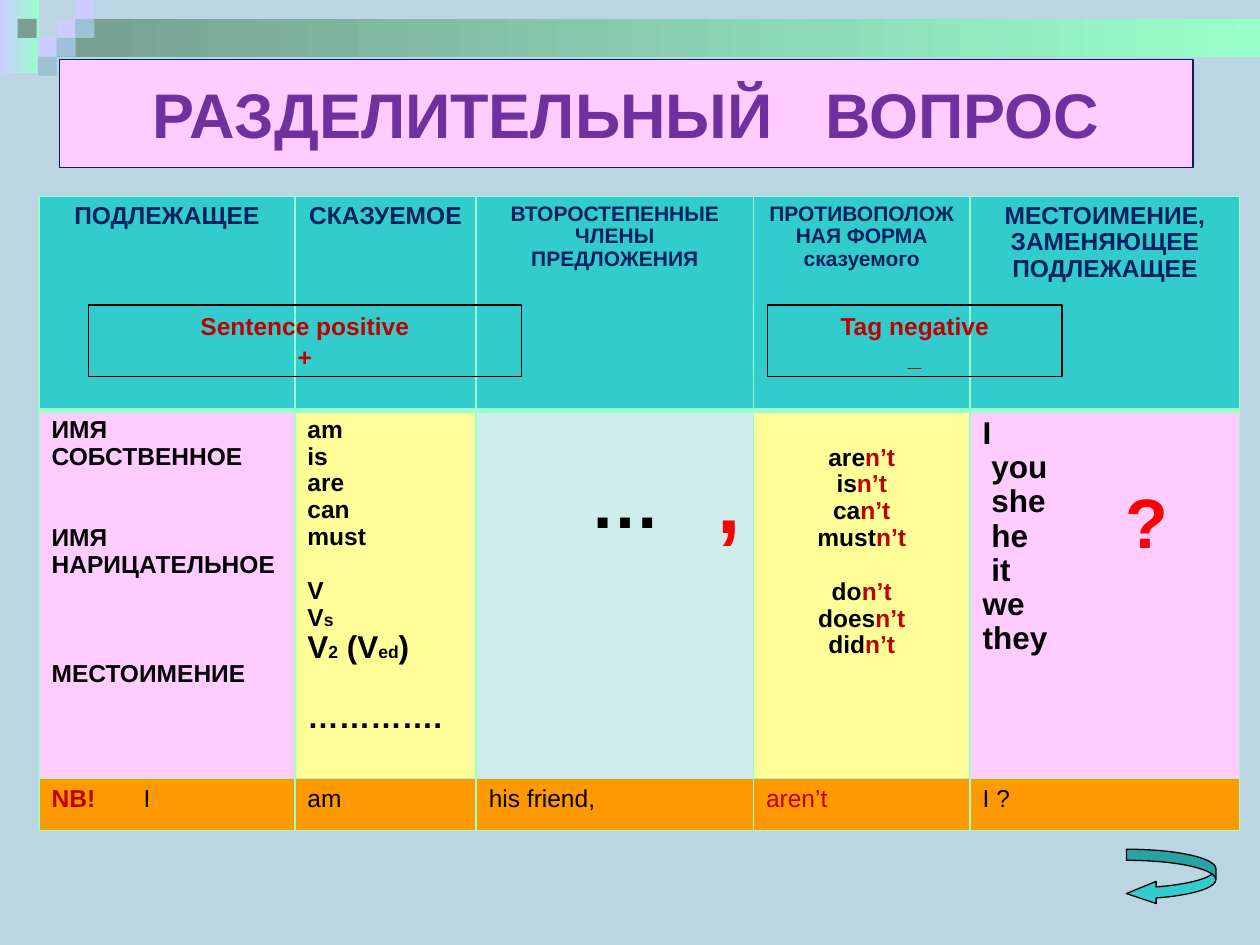
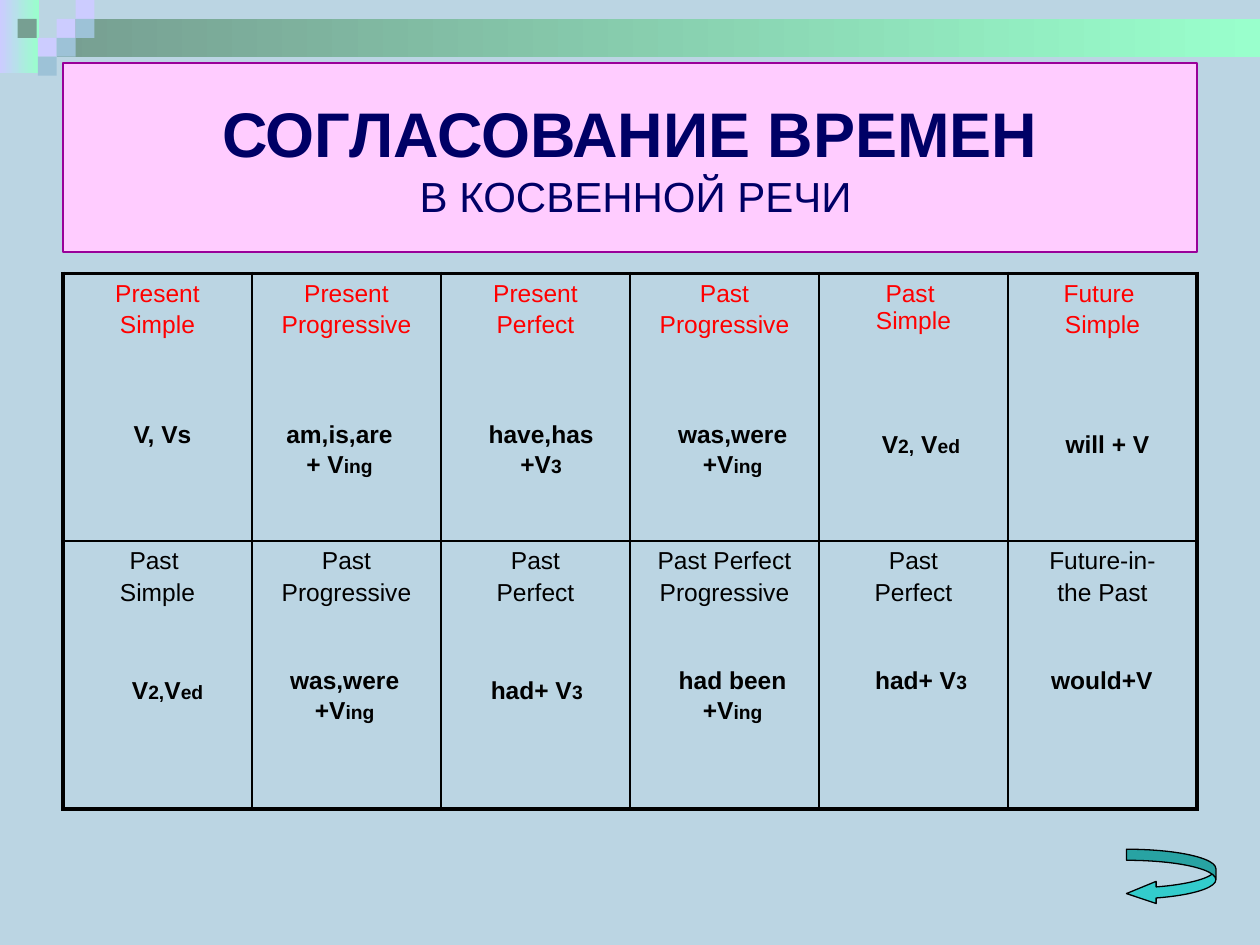
from dataclasses import dataclass
from pptx import Presentation
from pptx.dml.color import RGBColor
from pptx.enum.shapes import MSO_SHAPE as Shape
from pptx.enum.text import MSO_ANCHOR as Anchor, PP_ALIGN as Align
from pptx.oxml import parse_xml
from pptx.oxml.ns import nsdecls
from pptx.util import Inches, Pt


@dataclass(frozen=True)
class Theme:
    font: str = "Arial"
    page: str = "BBD5E3"
    lilac: str = "CCCCFF"
    mint: str = "99FFCC"
    sage: str = "779F92"
    steel: str = "9DC2D7"
    pink: str = "FFCCFF"
    teal: str = "33CCCC"
    pale_teal: str = "CEECEC"
    yellow: str = "FFFF99"
    orange: str = "FF9900"
    navy: str = "002060"
    ink_blue: str = "000066"
    violet: str = "7030A0"
    purple: str = "990099"
    red: str = "FF0000"
    dark_red: str = "C00000"
    black: str = "000000"
    title: float = 36
    subtitle: float = 24
    comma: float = 48
    mark: float = 40
    large: float = 18
    body: float = 14
    compact: float = 12
    suffix: float = 11
    subscript: float = 10


THEME = Theme()


@dataclass
class Span:
    text: str
    size: float = None
    color: str = None
    bold: bool = None
    spacing: float = 0


@dataclass
class Line:
    spans: list
    before: float = 0


# Shared helpers
def place(box):
    return [Inches(value) for value in box]


def rgb(color):
    return RGBColor.from_string(color)


def write(frame, lines, size=THEME.body, color=THEME.black, bold=True,
          align=Align.CENTER, before=0, line_spacing=None):
    """Lines are plain strings, lists of spans or Line objects."""
    for number, line in enumerate(lines):
        para = frame.paragraphs[0] if number == 0 else frame.add_paragraph()
        if not isinstance(line, Line):
            line = Line(line, before)
        para.alignment = align
        para.space_before = Pt(line.before if number else 0)
        para.line_spacing = line_spacing
        spans = [Span(line.spans)] if isinstance(line.spans, str) else line.spans
        for part in spans:
            for index, piece in enumerate(part.text.split("\v")):
                if index:
                    para.add_line_break()
                if not piece:
                    continue
                span = para.add_run()
                span.text = piece
                span.font.name = THEME.font
                span.font.size = Pt(part.size or size)
                span.font.bold = bold if part.bold is None else part.bold
                span.font.color.rgb = rgb(part.color or color)
                if part.spacing:
                    span.font._element.set("spc", str(int(part.spacing * 100)))


def formula(*parts, size=THEME.body, small=THEME.suffix):
    """Alternate full-size and small pieces."""
    return [Span(text, small if i % 2 else size) for i, text in enumerate(parts)]


def add_box(page, box, fill=None, line=None, kind=Shape.RECTANGLE):
    shape = page.shapes.add_shape(kind, *place(box))
    shape.shadow.inherit = False
    if fill is None:
        shape.fill.background()
    elif isinstance(fill, tuple):
        shape.fill.gradient()
        shape.fill.gradient_angle = 0
        for stop, color in zip(shape.fill.gradient_stops, fill):
            stop.color.rgb = rgb(color)
    else:
        shape.fill.solid()
        shape.fill.fore_color.rgb = rgb(fill)
    if line:
        shape.line.color.rgb = rgb(line)
        shape.line.width = Pt(0.75)
    else:
        shape.line.fill.background()
    shape.text_frame.word_wrap = True
    shape.text_frame.vertical_anchor = Anchor.MIDDLE
    return shape


def add_label(page, box, lines, **style):
    frame = page.shapes.add_textbox(*place(box)).text_frame
    frame.word_wrap = True
    write(frame, lines, **style)
    return frame


def add_grid(page, box, widths, heights):
    table = page.shapes.add_table(len(heights), len(widths), *place(box)).table
    table.first_row = table.horz_banding = False
    for column, width in zip(table.columns, widths):
        column.width = Inches(width)
    for row, height in zip(table.rows, heights):
        row.height = Inches(height)
    return table


def style_cell(cell, fill, color, left, right, top, bottom):
    if fill:
        cell.fill.solid()
        cell.fill.fore_color.rgb = rgb(fill)
    else:
        cell.fill.background()
    properties = cell._tc.get_or_add_tcPr()
    sides = zip("LRTB", (left, right, top, bottom))
    for index, (side, width) in enumerate(sides):
        properties.insert(index, parse_xml(
            f'<a:ln{side} {nsdecls("a")} w="{Pt(width)}"><a:solidFill>'
            f'<a:srgbClr val="{color}"/></a:solidFill></a:ln{side}>'))


# Page frame: background, top band, mosaic, title and return arrow
def add_page(deck):
    page = deck.slides.add_slide(deck.slide_layouts[6])
    page.background.fill.solid()
    page.background.fill.fore_color.rgb = rgb(THEME.page)
    add_box(page, (0, 0, 0.31, 0.58), (THEME.lilac, THEME.mint))
    add_box(page, (0.45, 0.15, 9.55, 0.3), (THEME.sage, THEME.mint))
    tile = 0.15
    mosaic = [(0.45, 0.15, THEME.lilac), (0.6, 0, THEME.lilac),
              (0.6, 0.15, THEME.steel), (0.3, 0.3, THEME.lilac),
              (0.14, 0.15, THEME.sage), (0.45, 0.3, THEME.steel),
              (0.3, 0.45, THEME.steel)]
    for left, top, color in mosaic:
        add_box(page, (left, top, tile, tile), color)
    return page


def add_title(page, box, spans, color, line):
    shape = add_box(page, box, THEME.pink, line)
    write(shape.text_frame, [spans], THEME.title, color)


def add_return_arrow(page, box=(8.94, 6.74, 0.71, 0.44)):
    arrow = add_box(page, box, THEME.teal, THEME.black, Shape.CURVED_LEFT_ARROW)
    for index, value in enumerate((0.2, 0.4, 0.535)):
        arrow.adjustments[index] = value


# Slide 1: tag questions
def negative(verb):
    return [Span(verb), Span("n’t", color=THEME.dark_red)]


def add_question_table(page, box):
    table = add_grid(page, box, (2.03, 1.44, 2.2, 1.72, 2.14), (1.7, 2.92, 0.41))
    spacing = 0.97
    line, large_line = 15.7, 20.1
    headers = [["ПОДЛЕЖАЩЕЕ"], ["СКАЗУЕМОЕ"],
               ["ВТОРОСТЕПЕННЫЕ ЧЛЕНЫ ПРЕДЛОЖЕНИЯ"],
               ["ПРОТИВОПОЛОЖНАЯ ФОРМА", "сказуемого"],
               ["МЕСТОИМЕНИЕ, ЗАМЕНЯЮЩЕЕ ПОДЛЕЖАЩЕЕ"]]
    bodies = [
        ["ИМЯ СОБСТВЕННОЕ", Line("ИМЯ НАРИЦАТЕЛЬНОЕ", 2 * line),
         Line("МЕСТОИМЕНИЕ", 3 * line)],
        ["am", "is", "are", "can", "must", Line("V", line),
         formula("V", "s", small=THEME.subscript),
         formula("V", "2", " (V", "ed", ")", size=THEME.large,
                 small=THEME.subscript),
         Line([Span("………….", THEME.large)], large_line)],
        [],
        [negative("are"), negative("is"), negative("ca"), negative("must"),
         Line(negative("do"), line), negative("does"), negative("did")],
        ["I", " you", " she", " he", " it", "we", "they"]]
    notes = [[Span("NB!\t", color=THEME.dark_red, bold=True), Span("I")],
             "am", "his friend,", [Span("aren’t", color=THEME.dark_red)], "I ?"]
    body_fills = (THEME.pink, THEME.yellow, THEME.pale_teal, THEME.yellow, THEME.pink)

    for column, fill in enumerate(body_fills):
        header, body, note = (table.cell(row, column) for row in range(3))
        size = THEME.compact if column in (2, 3) else THEME.body
        write(header.text_frame, headers[column], size, THEME.navy,
              line_spacing=spacing)
        write(body.text_frame, bodies[column],
              THEME.large if column == 4 else THEME.body,
              align=Align.CENTER if column == 3 else Align.LEFT,
              line_spacing=spacing)
        write(note.text_frame, [notes[column]], bold=False, align=Align.LEFT)
        style_cell(header, THEME.teal, THEME.mint, 1, 1, 1, 3)
        style_cell(body, fill, THEME.mint, 1, 1, 3, 1)
        style_cell(note, THEME.orange, THEME.mint, 1, 1, 1, 1)

    table.cell(1, 3).margin_top = Inches(0.27)
    # Tab stop between the note mark and its pronoun
    note_para = table.cell(2, 0).text_frame.paragraphs[0]
    note_para._p.get_or_add_pPr().append(parse_xml(
        f'<a:tabLst {nsdecls("a")}><a:tab pos="{Inches(0.73)}" algn="l"/></a:tabLst>'))


def build_tag_question_slide(deck):
    page = add_page(deck)
    add_title(page, (0.47, 0.47, 9, 0.86),
              [Span("РАЗДЕЛИТЕЛЬНЫЙ"), Span(" ", spacing=20), Span("ВОПРОС")],
              THEME.violet, THEME.navy)
    add_question_table(page, (0.31, 1.56, 9.53, 5.03))
    # Punctuation marks over the table
    add_label(page, (8.75, 3.75, 0.7, 0.77), ["?"], size=THEME.mark, color=THEME.red)
    comma = add_label(page, (5.59, 3.52, 0.4, 0.91), [","], size=THEME.comma,
                      color=THEME.red)
    comma.margin_left = comma.margin_right = 0
    add_label(page, (4.22, 3.59, 1.48, 0.77), ["…"], size=THEME.mark)
    add_return_arrow(page)
    # Sentence and tag frames
    for left, width, lines in ((0.7, 3.44, ["Sentence positive", "+"]),
                               (6.09, 2.34, ["Tag negative", "_"])):
        frame = add_box(page, (left, 2.42, width, 0.57), line=THEME.black)
        write(frame.text_frame, lines, color=THEME.dark_red, before=1)


# Slide 2: sequence of tenses
def add_tense_table(page, box):
    rows = [
        [["Present", "Simple"], ["Present", "Progressive"], ["Present", "Perfect"],
         ["Past", "Progressive"], ["Past \vSimple"], ["Future ", "Simple"]],
        [["Past ", "Simple"], ["Past", "Progressive"], ["Past", "Perfect"],
         ["Past Perfect", "Progressive"], ["Past", "Perfect"],
         ["Future-in-", "the Past"]]]
    columns = len(rows[0])
    table = add_grid(page, box, [box[2] / columns] * columns,
                     [box[3] / len(rows)] * len(rows))
    outer, inner = 2.25, 1
    for r, row in enumerate(rows):
        for c, lines in enumerate(row):
            cell = table.cell(r, c)
            write(cell.text_frame, lines, color=THEME.black if r else THEME.red,
                  bold=False, before=2.2)
            style_cell(cell, None, THEME.black,
                       inner if c else outer,
                       outer if c == columns - 1 else inner,
                       inner if r else outer,
                       outer if r == len(rows) - 1 else inner)


def build_tense_slide(deck):
    page = add_page(deck)
    add_title(page, (0.5, 0.5, 9, 1.5),
              [Span("СОГЛАСОВАНИЕ ВРЕМЕН\v"),
               Span(" В КОСВЕННОЙ РЕЧИ", THEME.subtitle, bold=False)],
              THEME.ink_blue, THEME.purple)
    add_tense_table(page, (0.5, 2.17, 9, 4.25))
    # Verb formulas over the cells
    short, tall = 0.34, 0.57
    formulas = [
        ((0.86, 3.28, 0.86, short), ["V, Vs"]),
        ((2.11, 3.28, 1.17, tall), [formula("am,is,are + V", "ing")]),
        ((3.75, 3.28, 1.09, tall), [formula("have,has +V", "3")]),
        ((5.23, 3.28, 1.17, tall), [formula("was,were +V", "ing")]),
        ((6.88, 3.36, 0.86, short), [formula("V", "2,", " V", "ed")]),
        ((8.28, 3.36, 1.02, short), ["will + V"]),
        ((0.94, 5.31, 0.78, short), [formula("V", "2,", "V", "ed")]),
        ((2.19, 5.23, 1.09, tall), [formula("was,were+V", "ing")]),
        ((3.75, 5.31, 1.02, short), [formula("had+ V", "3")]),
        ((5.23, 5.23, 1.17, tall), ["had been", formula("+V", "ing")]),
        ((6.8, 5.23, 1.02, tall), [formula("had+ V", "3")]),
        ((8.2, 5.23, 1.09, short), ["would+V"])]
    for box, lines in formulas:
        add_label(page, box, lines)
    add_return_arrow(page)


def main():
    deck = Presentation()
    deck.slide_width, deck.slide_height = Inches(10), Inches(7.5)
    build_tag_question_slide(deck)
    build_tense_slide(deck)
    deck.save("out.pptx")


if __name__ == "__main__":
    main()
